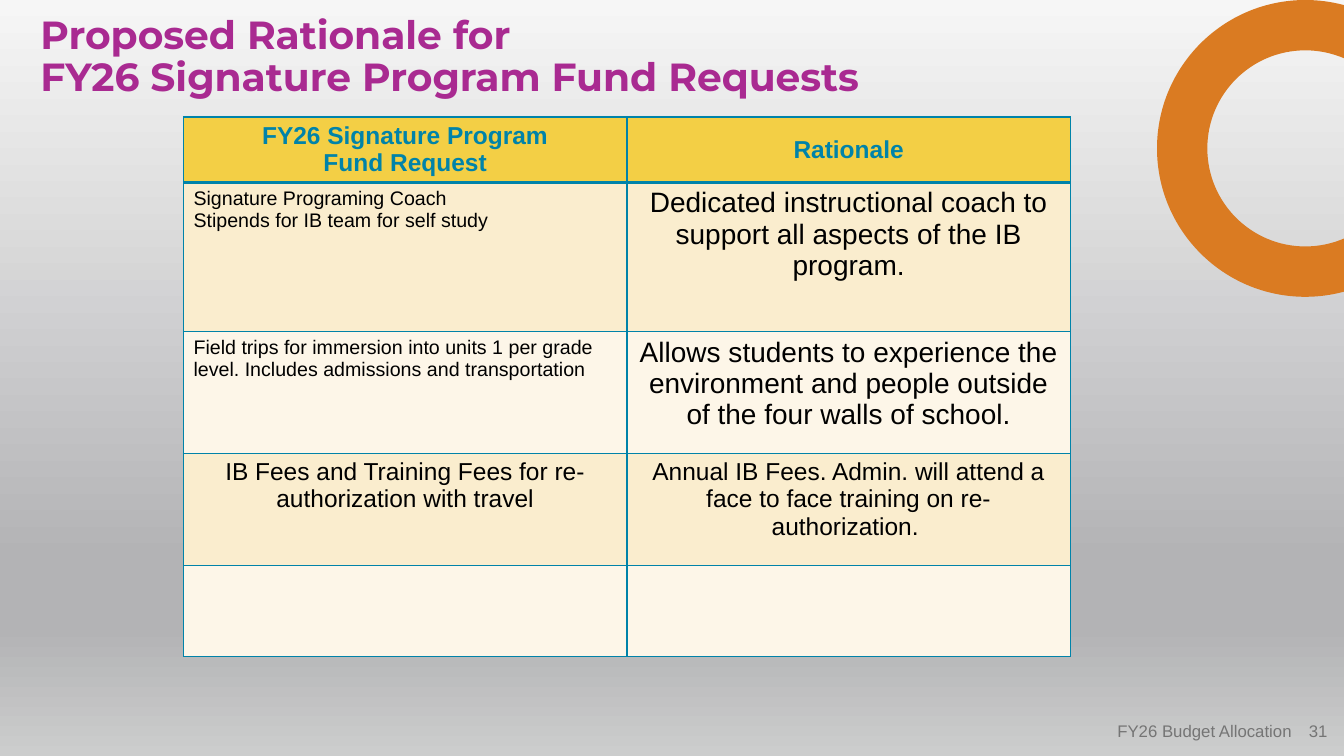
import math
from typing import Any, NamedTuple

import lxml.etree
import pptx
import pptx.dml.color
import pptx.enum.text
import pptx.oxml.ns
import pptx.util

ALIGN = pptx.enum.text.PP_ALIGN
ANCHOR = pptx.enum.text.MSO_ANCHOR
SLIDE_WIDTH = pptx.util.Inches(13.333)
SLIDE_HEIGHT = pptx.util.Inches(7.5)


class Theme(NamedTuple):
    purple: str = "A92A91"
    teal: str = "0083A9"
    gold: str = "F3CF45"
    sand: str = "FAEDCE"
    cream: str = "FDF6E8"
    orange: str = "DA7B22"
    black: str = "000000"
    grey: str = "757575"
    backdrop: tuple = ((0, "F6F6F6"), (74, "B3B3B5"), (83, "B3B3B5"), (100, "CCCDCD"))
    title_font: str = "Montserrat"
    body_font: str = "Arial"
    title_size: float = 28
    large: float = 20
    medium: float = 17.5
    small: float = 14
    footer_size: float = 12


THEME = Theme()


class Entry(NamedTuple):
    text: str = ""
    size: float = THEME.medium
    align: Any = ALIGN.CENTER


class Row(NamedTuple):
    height: float
    fill: str
    request: Entry = Entry()
    rationale: Entry = Entry()


class Label(NamedTuple):
    text: str
    area: tuple[float, float, float, float]
    inset: float = 0
    align: Any = ALIGN.RIGHT
    anchor: Any = ANCHOR.MIDDLE
    spacing: float = 1
    font: tuple = (THEME.body_font, THEME.footer_size, THEME.grey, False)


ROWS = (
    Row(8.67, THEME.gold, Entry("FY26 Signature Program\nFund Request"), Entry("Rationale")),
    Row(19.73, THEME.sand,
        Entry("Signature Programing Coach\nStipends for IB team for self study",
              THEME.small, ALIGN.LEFT),
        Entry("Dedicated instructional coach to support all aspects of the IB program.",
              THEME.large)),
    Row(16.1, THEME.cream,
        Entry("Field trips for immersion into units 1 per grade level. "
              "Includes admissions and transportation", THEME.small, ALIGN.LEFT),
        Entry("Allows students to experience the environment and people outside "
              "of the four walls of school.", THEME.large)),
    Row(14.8, THEME.sand,
        Entry("IB Fees and Training Fees for re-authorization with travel"),
        Entry("Annual IB Fees. Admin. will attend a face to face training "
              "on re-authorization. ")),
    Row(12.03, THEME.cream),
)
TABLE_AREA = (13.65, 15.47, 66, sum(row.height for row in ROWS))
TITLE = Label("Proposed Rationale for\vFY26 Signature Program Fund Requests",
              (3, 2, 84.83, 13.73), 0, ALIGN.LEFT, ANCHOR.TOP, 0.9,
              (THEME.title_font, THEME.title_size, THEME.purple, True))
FOOTER = (
    Label("31", (76.28, 94, 22.5, 5.33)),
    Label("FY26 Budget Allocation", (80.93, 94, 15.95, 5.33), 0.75),
)


def across(percent: float) -> int:
    return round(SLIDE_WIDTH * percent / 100)


def down(percent: float) -> int:
    return round(SLIDE_HEIGHT * percent / 100)


def lengths(area: tuple[float, float, float, float]) -> tuple[int, int, int, int]:
    left, top, width, height = area
    return across(left), down(top), across(width), down(height)


def apply(target: Any, values: dict[str, Any]) -> None:
    for name, value in values.items():
        setattr(target, name, value)


def format_font(font: Any, name: str, size: float, color: str, bold: bool) -> None:
    apply(font, {"name": name, "size": pptx.util.Pt(size), "bold": bold})
    font.color.rgb = pptx.dml.color.RGBColor.from_string(color)


def paint(fill: Any, color: str) -> None:
    fill.solid()
    fill.fore_color.rgb = pptx.dml.color.RGBColor.from_string(color)


def add_child(parent: Any, tag: str, **attributes: str) -> Any:
    return lxml.etree.SubElement(parent, pptx.oxml.ns.qn(tag), attributes)


def paint_backdrop(slide: Any) -> None:
    fill = slide.background.fill
    fill.gradient()
    fill.gradient_angle = 270
    stops = slide.element.find(".//" + pptx.oxml.ns.qn("a:gsLst"))
    for stop in list(stops):
        stops.remove(stop)
    for percent, color in THEME.backdrop:
        add_child(add_child(stops, "a:gs", pos=str(percent * 1000)), "a:srgbClr", val=color)


def arc(radius: int, turn: int) -> list[list[tuple[float, float]]]:
    center_x, center_y = across(97.13), down(19.63)
    start = math.acos((SLIDE_WIDTH - center_x) / radius)
    angles = [start, math.pi / 2, math.pi, 3 * math.pi / 2, 2 * math.pi - start][::turn]
    curves = []
    for begin, end in zip(angles, angles[1:]):
        pull = 4 / 3 * math.tan((end - begin) / 4)
        curves.append([(center_x + radius * (math.cos(angle) - bend * math.sin(angle)),
                        center_y + radius * (math.sin(angle) + bend * math.cos(angle)))
                       for angle, bend in ((begin, 0), (begin, pull), (end, -pull), (end, 0))])
    return curves


def draw_ring(slide: Any) -> None:
    outer, inner = arc(down(19.63), 1), arc(down(12.97), -1)
    corners = [curve[-1] for curve in outer] + [inner[0][0]] + [curve[-1] for curve in inner]
    builder = slide.shapes.build_freeform(*outer[0][0])
    builder.add_line_segments(corners, close=True)
    ring = builder.convert_to_shape()
    ring.shadow.inherit = False
    paint(ring.fill, THEME.orange)
    ring.line.fill.background()
    sides = ring.element.findall(".//" + pptx.oxml.ns.qn("a:lnTo"))
    for side, curve in zip(sides[:4] + sides[5:9], outer + inner):
        bend = add_child(side.getparent(), "a:cubicBezTo")
        for x, y in curve[1:]:
            add_child(bend, "a:pt", x=str(round(x - ring.left)), y=str(round(y - ring.top)))
        side.getparent().replace(side, bend)


def write_label(shape: Any, label: Label) -> None:
    apply(shape, dict(zip(("left", "top", "width", "height"), lengths(label.area))))
    frame = shape.text_frame
    inset = across(label.inset)
    apply(frame, {"margin_left": inset, "margin_right": inset, "margin_top": 0,
                  "margin_bottom": 0, "word_wrap": True, "vertical_anchor": label.anchor,
                  "auto_size": pptx.enum.text.MSO_AUTO_SIZE.NONE, "text": label.text})
    line = frame.paragraphs[0]
    apply(line, {"alignment": label.align, "line_spacing": label.spacing})
    for run in line.runs:
        format_font(run.font, *label.font)


def fill_cell(cell: Any, entry: Entry, fill: str, position: int) -> None:
    header = position == 0
    widths = {"L": 1, "R": 1, "T": 3 if position == 1 else 1, "B": 3 if header else 1}
    for side, width in widths.items():
        border = add_child(cell._tc.get_or_add_tcPr(), f"a:ln{side}", w=str(pptx.util.Pt(width)))
        add_child(add_child(border, "a:solidFill"), "a:srgbClr", val=THEME.teal)
    paint(cell.fill, fill)
    apply(cell, {"text": entry.text, "vertical_anchor": ANCHOR.MIDDLE if header else ANCHOR.TOP})
    for paragraph in cell.text_frame.paragraphs:
        paragraph.alignment = entry.align
        format_font(paragraph.font, THEME.body_font, entry.size,
                    THEME.teal if header else THEME.black, header)


def draw_table(slide: Any) -> None:
    requests = slide.shapes.add_table(len(ROWS), 2, *lengths(TABLE_AREA)).table
    apply(requests, {"first_row": False, "horz_banding": False})
    for position, row in enumerate(ROWS):
        requests.rows[position].height = down(row.height)
        for column, entry in enumerate((row.request, row.rationale)):
            fill_cell(requests.cell(position, column), entry, row.fill, position)


deck = pptx.Presentation()
apply(deck, {"slide_width": SLIDE_WIDTH, "slide_height": SLIDE_HEIGHT})
rationale = deck.slides.add_slide(deck.slide_layouts[5])
paint_backdrop(rationale)
draw_ring(rationale)
write_label(rationale.shapes.title, TITLE)
draw_table(rationale)
for item in FOOTER:
    write_label(rationale.shapes.add_textbox(*lengths(item.area)), item)
deck.save("out.pptx")
